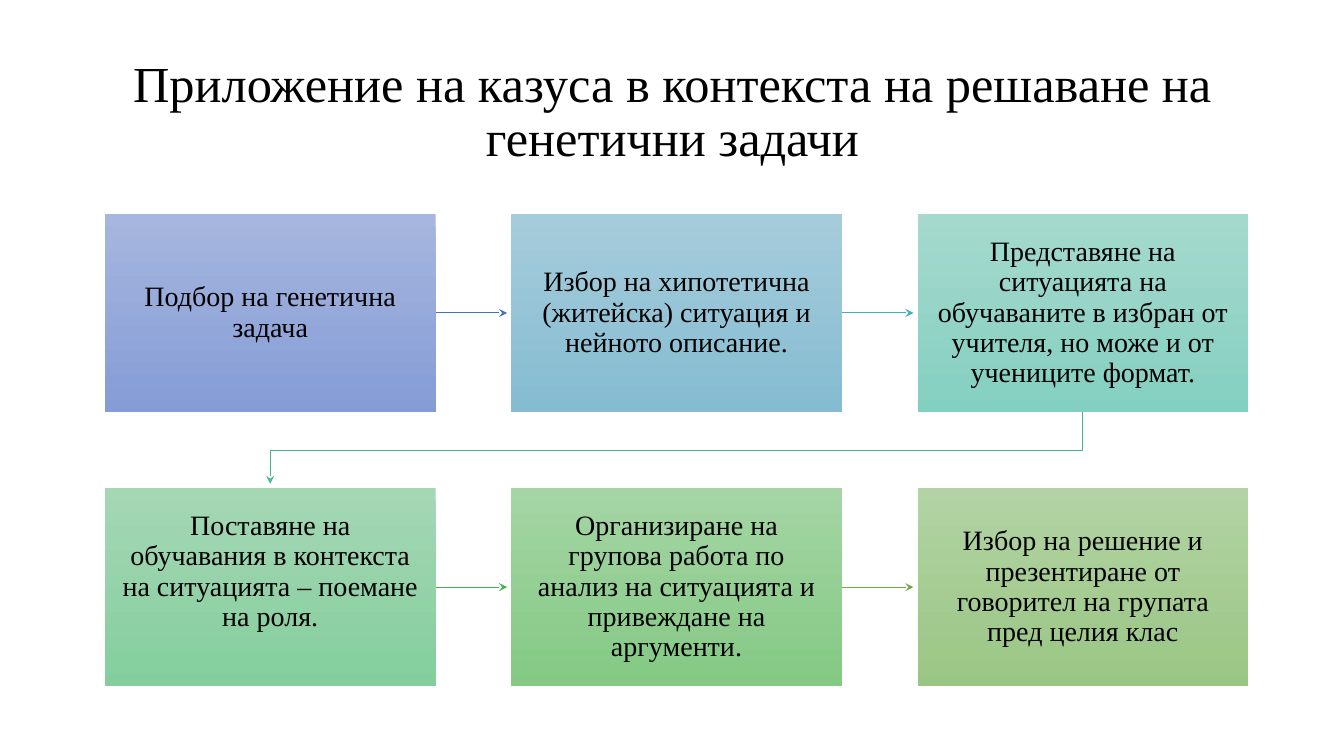
import pptx
import pptx.util
import pptx.dml.color
import pptx.enum.shapes
import pptx.enum.text
import pptx.oxml
import pptx.oxml.ns

inch = pptx.util.Inches
shade = pptx.dml.color.RGBColor.from_string

# Theme: colours, type and line width
theme = {
    "font": "Times New Roman", "ink": "000000",
    "title": 36, "body": 20, "line": 0.75,
    "cards": [("A6B6DE", "859CD6"), ("A6CCDB", "85BCD2"), ("A5D9CE", "84D0C0"),
              ("A5D7B5", "84CE9D"), ("A5D5A5", "84C984"), ("B3D3A4", "9AC684")],
    "links": ["4372C3", "43AEBD", "44B78C", "45B150", "6FAA47"],
}

steps = [
    "Подбор на генетична задача",
    "Избор на хипотетична (житейска) ситуация и нейното описание.",
    "Представяне на ситуацията на обучаваните в избран от учителя, "
    "но може и от учениците формат.",
    "Поставяне на обучавания в контекста на ситуацията – поемане на роля.",
    "Организиране на групова работа по анализ на ситуацията "
    "и привеждане на аргументи.",
    "Избор на решение и презентиране от говорител на групата пред целия клас",
]

# Grid: three columns, two rows
cols = 3
left, top = 1.04, 2.12
wide, high = 3.28, 1.97
across, down = 4.03, 2.72
gap = 0.04
pad = 0.16
lift = 0.3  # extra room under the text of the fourth card


def write(frame, text, size, insets):
    frame.text = text
    form = {"word_wrap": True,
            "vertical_anchor": pptx.enum.text.MSO_ANCHOR.MIDDLE, **insets}
    for name, value in form.items():
        setattr(frame, name, value)
    para = frame.paragraphs[0]
    para.alignment = pptx.enum.text.PP_ALIGN.CENTER
    para.line_spacing = 0.9
    font = para.runs[0].font
    for name, value in {"name": theme["font"], "size": pptx.util.Pt(size)}.items():
        setattr(font, name, value)
    font.color.rgb = shade(theme["ink"])


def point(link, colour):
    link.line.color.rgb = shade(colour)
    link.line.width = pptx.util.Pt(theme["line"])
    space = pptx.oxml.ns.nsdecls("a")
    link.line._get_or_add_ln().append(
        pptx.oxml.parse_xml(f'<a:tailEnd {space} type="stealth"/>'))
    props = link._element.spPr
    if props.find(pptx.oxml.ns.qn("a:effectLst")) is None:
        props.append(pptx.oxml.parse_xml(f"<a:effectLst {space}/>"))


deck = pptx.Presentation()
deck.slide_width, deck.slide_height = inch(13.33), inch(7.5)
slide = deck.slides.add_slide(deck.slide_layouts[5])
shapes = slide.shapes

# Title
title = shapes.title
place = {"left": 0.92, "top": 0.4, "width": 11.5, "height": 1.45}
for name, value in place.items():
    setattr(title, name, inch(value))
write(title.text_frame, "Приложение на казуса в контекста на решаване на генетични задачи",
      theme["title"], {})

# Cards
cards = []
for i, (step, tones) in enumerate(zip(steps, theme["cards"])):
    row, col = divmod(i, cols)
    card = shapes.add_shape(
        pptx.enum.shapes.MSO_SHAPE.RECTANGLE,
        inch(left + col * across), inch(top + row * down), inch(wide), inch(high))
    card.shadow.inherit = False
    card.line.fill.background()
    card.fill.gradient()
    card.fill.gradient_angle = 270
    for stop, tone in zip(card.fill.gradient_stops, tones):
        stop.color.rgb = shade(tone)
    insets = {f"margin_{side}": inch(pad) for side in ("left", "top", "right", "bottom")}
    if i == 3:
        insets["margin_bottom"] = inch(pad + lift)
    write(card.text_frame, step, theme["body"], insets)
    cards.append(card)

# Arrows: straight within a row, bent from one row to the next
for i, colour in enumerate(theme["links"]):
    start, end = cards[i], cards[i + 1]
    if (i + 1) % cols:
        level = start.top + start.height // 2
        link = shapes.add_connector(
            pptx.enum.shapes.MSO_CONNECTOR.STRAIGHT,
            start.left + start.width, level, end.left - inch(gap), level)
        link.begin_connect(start, 3)
    else:
        from_x, to_x = (box.left + box.width // 2 for box in (start, end))
        base = start.top + start.height
        turn = (base + end.top) // 2
        pen = shapes.build_freeform(from_x, base)
        pen.add_line_segments(
            [(from_x, turn), (to_x, turn), (to_x, end.top - inch(gap))], close=False)
        link = pen.convert_to_shape()
        link.fill.background()
        link.shadow.inherit = False
    point(link, colour)

deck.save("out.pptx")
